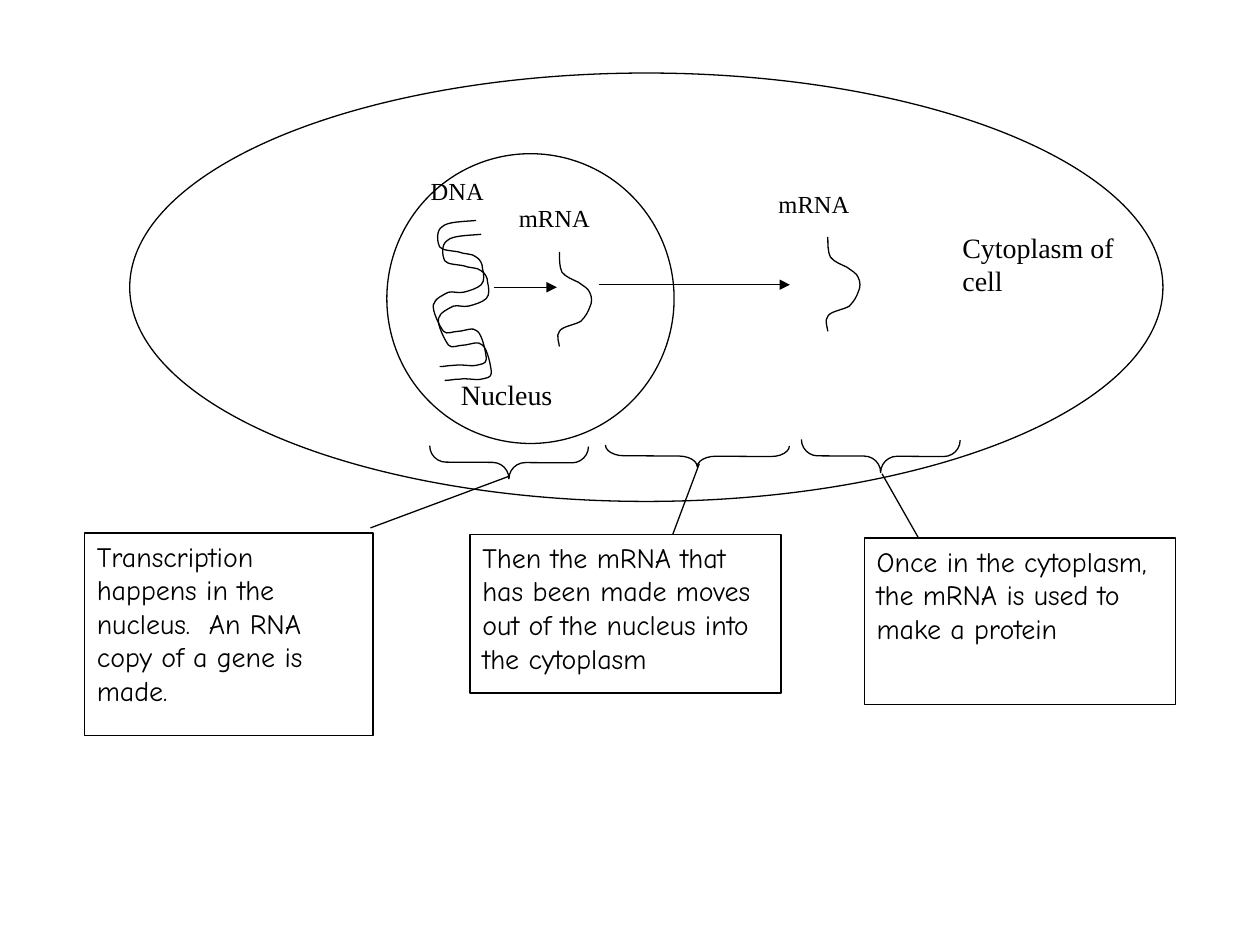
from lxml.etree import SubElement
from pptx import Presentation
from pptx.dml.color import RGBColor
from pptx.enum.shapes import MSO_CONNECTOR, MSO_SHAPE
from pptx.enum.text import MSO_ANCHOR, PP_ALIGN
from pptx.oxml.ns import qn
from pptx.util import Pt

PX = 9144  # EMU per px, 100 px to the inch
BLACK = RGBColor(0, 0, 0)
WHITE = RGBColor(255, 255, 255)
LABEL_FONT = "Times New Roman"
STEP_FONT = "Comic Neue"

# Bezier points relative to the curve's box: a start, then three per segment
DNA_STRAND = [
    (35, 0), (24, 1), (12, 1), (8, 5), (3, 8), (4, 17), (6, 21),
    (8, 24), (16, 24), (21, 25), (25, 27), (32, 26), (35, 29),
    (38, 31), (40, 34), (40, 38), (41, 42), (42, 48), (39, 51),
    (36, 54), (29, 56), (25, 57), (20, 58), (17, 56), (13, 57),
    (9, 59), (2, 62), (1, 67), (0, 72), (6, 84), (9, 88),
    (12, 91), (16, 88), (21, 88), (25, 88), (33, 84), (36, 88),
    (40, 91), (43, 106), (43, 110), (43, 114), (39, 114), (35, 115),
    (31, 116), (23, 114), (18, 115), (13, 115), (10, 116), (6, 116),
]
MRNA_STRAND = [
    (3, 0), (3, 6), (3, 12), (5, 16), (8, 20), (14, 22), (18, 24),
    (22, 27), (26, 29), (27, 32), (29, 36), (29, 40), (27, 44),
    (26, 47), (24, 51), (20, 55), (15, 58), (5, 59), (3, 63),
    (0, 66), (3, 73), (3, 75),
]

# Text, its box, the brace's box and the leader's ends, relative to the text box
STEPS = [
    ("Transcription happens in the nucleus.  An RNA copy of a gene is made.",
     (67, 423, 229, 161), (324, -119, 26, 126), 0.5, (227, -4, 337, -45)),
    ("Then the mRNA that has been made moves out of the nucleus into the cytoplasm",
     (373, 424, 247, 126), (172, -135, 17, 146), 0.858, (182, -56, 161, 0)),
    ("Once in the cytoplasm, the mRNA is used to make a protein",
     (686, 427, 247, 132), (0, -128, 26, 126), 0.5, (14, -51, 43, 0)),
]


def emu(*lengths):
    return [length * PX for length in lengths]


def outline(shape):
    shape.line.color.rgb = BLACK
    shape.line.width = Pt(0.75)


def add_preset(page, kind, box, fill=WHITE):
    shape = page.shapes.add_shape(kind, *emu(*box))
    shape.shadow.inherit = False
    if fill is None:
        shape.fill.background()
    else:
        shape.fill.solid()
        shape.fill.fore_color.rgb = fill
    outline(shape)
    return shape


def write(shape, text, font, size):
    frame = shape.text_frame
    frame.word_wrap = True
    frame.vertical_anchor = MSO_ANCHOR.TOP
    para = frame.paragraphs[0]
    para.text = text
    para.alignment = PP_ALIGN.LEFT
    para.font.name = font
    para.font.size = Pt(size)
    para.font.color.rgb = BLACK
    return para


def add_label(page, text, box, size):
    write(page.shapes.add_textbox(*emu(*box)), text, LABEL_FONT, size)


def add_line(page, ends, arrow=False):
    line = page.shapes.add_connector(MSO_CONNECTOR.STRAIGHT, *emu(*ends))
    outline(line)
    if arrow:
        SubElement(line.line._get_or_add_ln(), qn("a:tailEnd"), type="triangle")
    SubElement(line._element.spPr, qn("a:effectLst"))


def add_curve(page, points, left, top):
    """Draw a freeform, then join each three of its segments into one Bezier."""
    builder = page.shapes.build_freeform(*points[0], scale=float(PX))
    builder.add_line_segments(points[1:], close=False)
    curve = builder.convert_to_shape(*emu(left, top))
    curve.shadow.inherit = False
    curve.fill.background()
    outline(curve)
    segments = list(curve._element.iter(qn("a:lnTo")))
    route = segments[0].getparent()
    for start in range(0, len(segments), 3):
        bezier = SubElement(route, qn("a:cubicBezTo"))
        for segment in segments[start:start + 3]:
            bezier.append(segment[0])
            route.remove(segment)


def draw_cell(page, box):
    x, y = box[:2]
    add_preset(page, MSO_SHAPE.OVAL, box)
    draw_nucleus(page, (x + 204, y + 64, 228, 230))
    add_line(page, (x + 372, y + 168, x + 524, y + 168), arrow=True)
    add_curve(page, MRNA_STRAND, x + 551, y + 130)
    add_label(page, "mRNA", (x + 505, y + 87, 106, 61), 14)
    add_label(page, "Cytoplasm of cell", (x + 651, y + 120, 160, 104), 16)


def draw_nucleus(page, box):
    x, y = box[:2]
    add_preset(page, MSO_SHAPE.OVAL, box)
    for left, top in ((36, 53), (40, 64)):
        add_curve(page, DNA_STRAND, x + left, y + top)
    add_line(page, (x + 85, y + 106, x + 135, y + 106), arrow=True)
    add_curve(page, MRNA_STRAND, x + 134, y + 78)
    add_label(page, "Nucleus", (x + 49, y + 173, 154, 85), 16)
    add_label(page, "DNA", (x + 25, y + 13, 106, 61), 14)
    add_label(page, "mRNA", (x + 95, y + 34, 106, 61), 14)


def draw_step(page, text, box, brace_box, curl, leader):
    """Draw a caption with its leader line and the brace it explains."""
    x, y = box[:2]
    caption = add_preset(page, MSO_SHAPE.RECTANGLE, box)
    write(caption, text, STEP_FONT, 16).space_after = Pt(10)
    left, top, width, height = brace_box
    brace = add_preset(page, MSO_SHAPE.LEFT_BRACE,
                       (x + left, y + top, width, height), fill=None)
    brace.adjustments[0] = curl
    brace.rotation = 270.3
    x1, y1, x2, y2 = leader
    add_line(page, (x + x1, y + y1, x + x2, y + y2))


def main():
    deck = Presentation()
    deck.slide_width, deck.slide_height = emu(1000, 750)
    page = deck.slides.add_slide(deck.slide_layouts[6])
    draw_cell(page, (103, 58, 820, 340))
    for step in STEPS:
        draw_step(page, *step)
    deck.save("out.pptx")


if __name__ == "__main__":
    main()
